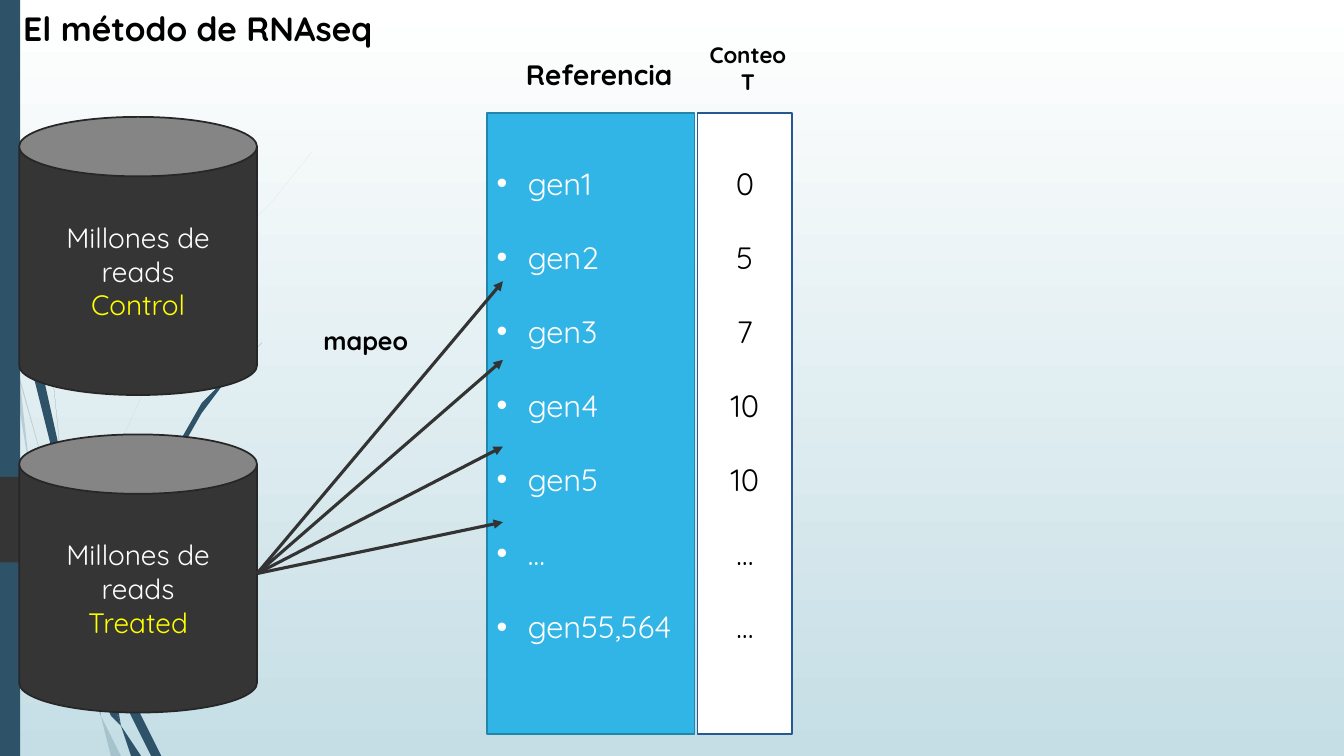
import pptx
import pptx.dml.color
import pptx.enum.shapes
import pptx.enum.text
import pptx.oxml.ns
import pptx.util
from lxml import etree

RGB = pptx.dml.color.RGBColor
SHAPE = pptx.enum.shapes.MSO_SHAPE
ALIGN = pptx.enum.text.PP_ALIGN
ANCHOR = pptx.enum.text.MSO_ANCHOR
qn = pptx.oxml.ns.qn

GRID = pptx.util.Inches(0.1)  # one column or row
COLS, ROWS = 133.33, 75

WHITE = RGB(0xFF, 0xFF, 0xFF)
BLACK = RGB(0, 0, 0)
YELLOW = RGB(0xFF, 0xFF, 0)
MIST = RGB(0xC5, 0xDE, 0xE5)
NAVY = RGB(0x2E, 0x53, 0x69)
CHARCOAL = RGB(0x35, 0x35, 0x35)
CHARCOAL_EDGE = RGB(0x27, 0x27, 0x27)
SKY = RGB(0x31, 0xB4, 0xE6)
SKY_EDGE = RGB(0x24, 0x85, 0xAA)
COUNT_EDGE = RGB(0x26, 0x59, 0x91)
ARROW = RGB(0x33, 0x33, 0x33)

PALE_WISPS = [
    [(1.4, 34.5), (6.2, 52), (8.5, 58.6), (8.4, 59.9), (5.8, 52.2), (1.7, 37.6)],
    [(8.8, 59.6), (9.2, 60.7), (12.7, 69.2), (15.5, 75), (15, 75), (12.3, 69.4),
     (8.8, 61)],
    [(1.1, 35), (1.7, 37.6), (3.1, 46.9), (7, 61.9), (9.3, 68.3), (9.9, 70.7),
     (10.1, 71.4), (9.2, 69.3), (6.5, 62.1), (2.8, 47)],
    [(8.4, 59.9), (8.8, 61), (9.1, 64.6), (10.3, 70.6), (10.5, 71.1), (9.6, 69.2),
     (9.3, 68.3), (8.7, 64.6)],
    [(9.3, 68.3), (9.6, 69.2), (10.5, 71.1), (12.4, 75), (11.4, 75), (10.1, 71.4),
     (9.9, 70.7)],
    [(8.8, 58.4), (11, 46.2), (16, 34.9), (22.9, 24.5), (26.8, 19.8), (31.2, 15.4),
     (31.2, 15.3), (26.8, 19.7), (22.8, 24.4), (15.8, 34.8), (10.7, 46.1),
     (8.5, 58.4), (8.5, 58.6), (8.8, 59.6)],
]
DARK_WISPS = [
    [(1.7, 23.3), (3.3, 35.5), (5.6, 47.7), (5.7, 48.1), (5.5, 45.3), (3.6, 35.5),
     (1.9, 23.2)],
    [(6, 47.2), (9.3, 59), (10.6, 63.1), (10.6, 64.5), (8.8, 59.2), (6.4, 50.5)],
    [(11, 64.1), (13.6, 70.6), (15.7, 74.9), (15.2, 74.9), (13.2, 70.8), (11.1, 65.6)],
    [(5.7, 47.7), (6.4, 50.5), (7.2, 55.6), (9.8, 65.7), (11, 69.1), (11.6, 71.7),
     (11.7, 72.2), (11.1, 70.8), (9.3, 65.9), (6.8, 55.7)],
    [(7, 14.1), (6.3, 19.3), (5.8, 24.5), (5.4, 34.9), (5.8, 45.3), (6, 47.2),
     (6.4, 50.5), (5.7, 47.7), (5.5, 44.9), (5.2, 34.9), (5.6, 24.5), (6.2, 19.3)],
    [(11.1, 63.3), (12.5, 55.2), (15.8, 47.6), (20.5, 40.6), (23.1, 37.4),
     (26.1, 34.4), (26, 34.4), (23.1, 37.3), (20.4, 40.5), (15.6, 47.4),
     (12.2, 55.1), (10.6, 63.1), (11, 64.1)],
    [(10.6, 64.5), (11.1, 65.6), (12.1, 71.6), (13.6, 74.9), (12.7, 74.9),
     (11.7, 72.2), (11, 69.1)],
]


def cells(*counts):
    """Turn grid counts into lengths."""
    return [int(n * GRID) for n in counts]


def set_all(target, formats):
    for name, value in formats.items():
        setattr(target, name, value)


def paint(sp, fill, edge=None):
    sp.shadow.inherit = False
    sp.fill.solid()
    sp.fill.fore_color.rgb = fill
    if edge is None:
        sp.line.fill.background()
    else:
        sp.line.color.rgb = edge
        sp.line.width = pptx.util.Pt(1.25)


def write(tf, lines, size, color, align=ALIGN.CENTER, bold=False, spacing=1.0):
    """Write one paragraph per line; a line may be a (text, colour) pair."""
    for i, line in enumerate(lines):
        text, line_color = line if isinstance(line, tuple) else (line, color)
        p = tf.paragraphs[0] if i == 0 else tf.add_paragraph()
        set_all(p, {"alignment": align, "line_spacing": spacing})
        r = p.add_run()
        r.text = text
        set_all(r.font, {"name": "Quicksand", "size": pptx.util.Pt(size), "bold": bold})
        r.font.color.rgb = line_color


def add_bullets(tf):
    indent = cells(3.1)[0]
    for p in tf.paragraphs:
        pPr = p._p.get_or_add_pPr()
        pPr.set("marL", str(indent))
        pPr.set("indent", str(-indent))
        etree.SubElement(pPr, qn("a:buFont"), typeface="Arial")
        etree.SubElement(pPr, qn("a:buChar"), char="•")


def add_block(s, kind, place, fill, edge=None):
    sp = s.shapes.add_shape(kind, *cells(*place))
    paint(sp, fill, edge)
    set_all(sp.text_frame, {"word_wrap": True, "vertical_anchor": ANCHOR.MIDDLE})
    return sp


def add_label(s, place, lines, size, align=ALIGN.LEFT):
    tf = s.shapes.add_textbox(*cells(*place)).text_frame
    tf.word_wrap = False
    write(tf, lines, size, BLACK, align, bold=True)


def add_wisp(s, points, alpha=None):
    builder = s.shapes.build_freeform(*points[0], scale=GRID)
    builder.add_line_segments(points[1:])
    sp = builder.convert_to_shape()
    paint(sp, NAVY)
    if alpha:
        color = sp._element.spPr.find(qn("a:solidFill"))[0]
        etree.SubElement(color, qn("a:alpha"), val=str(alpha * 1000))


def add_reads(s, top, sample):
    tf = add_block(s, SHAPE.CAN, (1.9, top, 23.6, 27.6), CHARCOAL, CHARCOAL_EDGE).text_frame
    write(tf, ["Millones de reads", (sample, YELLOW)], 20, WHITE)


def add_column(s, left, width, fill, edge, lines, color, align):
    tf = add_block(s, SHAPE.RECTANGLE, (left, 11.2, width, 61.6), fill, edge).text_frame
    tf.margin_bottom = cells(7.8)[0]
    write(tf, lines, 22, color, align, spacing=2.0)
    return tf


def add_arrow(s, start, end):
    c = s.shapes.add_connector(pptx.enum.shapes.MSO_CONNECTOR.STRAIGHT,
                               *cells(*start, *end))
    c.line.color.rgb = ARROW
    c.line.width = pptx.util.Pt(2.25)
    etree.SubElement(c.line._get_or_add_ln(), qn("a:tailEnd"), type="triangle")
    etree.SubElement(c._element.spPr, qn("a:effectLst"))


def add_backdrop(s):
    fill = s.background.fill
    fill.gradient()
    fill.gradient_angle = 270
    for stop, color, position in zip(fill.gradient_stops, (WHITE, MIST), (0, 1)):
        stop.color.rgb = color
        stop.position = position
    for points in PALE_WISPS:
        add_wisp(s, points, alpha=20)
    for points in DARK_WISPS:
        add_wisp(s, points)
    add_block(s, SHAPE.RECTANGLE, (0, 0, 2, ROWS), NAVY)
    add_block(s, SHAPE.PENTAGON, (0, 47.3, 19.1, 8.5), CHARCOAL)


def set_title(s, text):
    title = s.shapes.title
    set_all(title, dict(zip(("left", "top", "width", "height"), cells(1.3, 0.3, 37.4, 5))))
    set_all(title.text_frame, {"word_wrap": False, "vertical_anchor": ANCHOR.TOP,
                               "auto_size": pptx.enum.text.MSO_AUTO_SIZE.NONE})
    write(title.text_frame, [text], 24, BLACK, ALIGN.LEFT, bold=True)


def main():
    prs = pptx.Presentation()
    prs.slide_width, prs.slide_height = cells(COLS, ROWS)
    s = prs.slides.add_slide(prs.slide_layouts[5])
    add_backdrop(s)
    set_title(s, "El método de RNAseq")

    genes = [f"gen{n}" for n in range(1, 6)] + ["…", "gen55,564"]
    add_bullets(add_column(s, 48.3, 20.6, SKY, SKY_EDGE, genes, WHITE, ALIGN.LEFT))
    counts = ["0", "5", "7", "10", "10", "…", "…"]
    add_column(s, 69.2, 9.4, WHITE, COUNT_EDGE, counts, BLACK, ALIGN.CENTER)

    add_reads(s, 11.6, "Control")
    add_reads(s, 43.1, "Treated")
    for row in (27.9, 35.7, 44.3, 51.8):
        add_arrow(s, (25.5, 56.9), (49.9, row))

    add_label(s, (51.2, 5.2, 16.7, 4.4), ["Referencia"], 20)
    add_label(s, (68.7, 3.6, 11, 6.4), ["Conteo", "T"], 16, ALIGN.CENTER)
    add_label(s, (31.1, 31.8, 10.9, 4), ["mapeo"], 18)
    prs.save("out.pptx")


if __name__ == "__main__":
    main()
